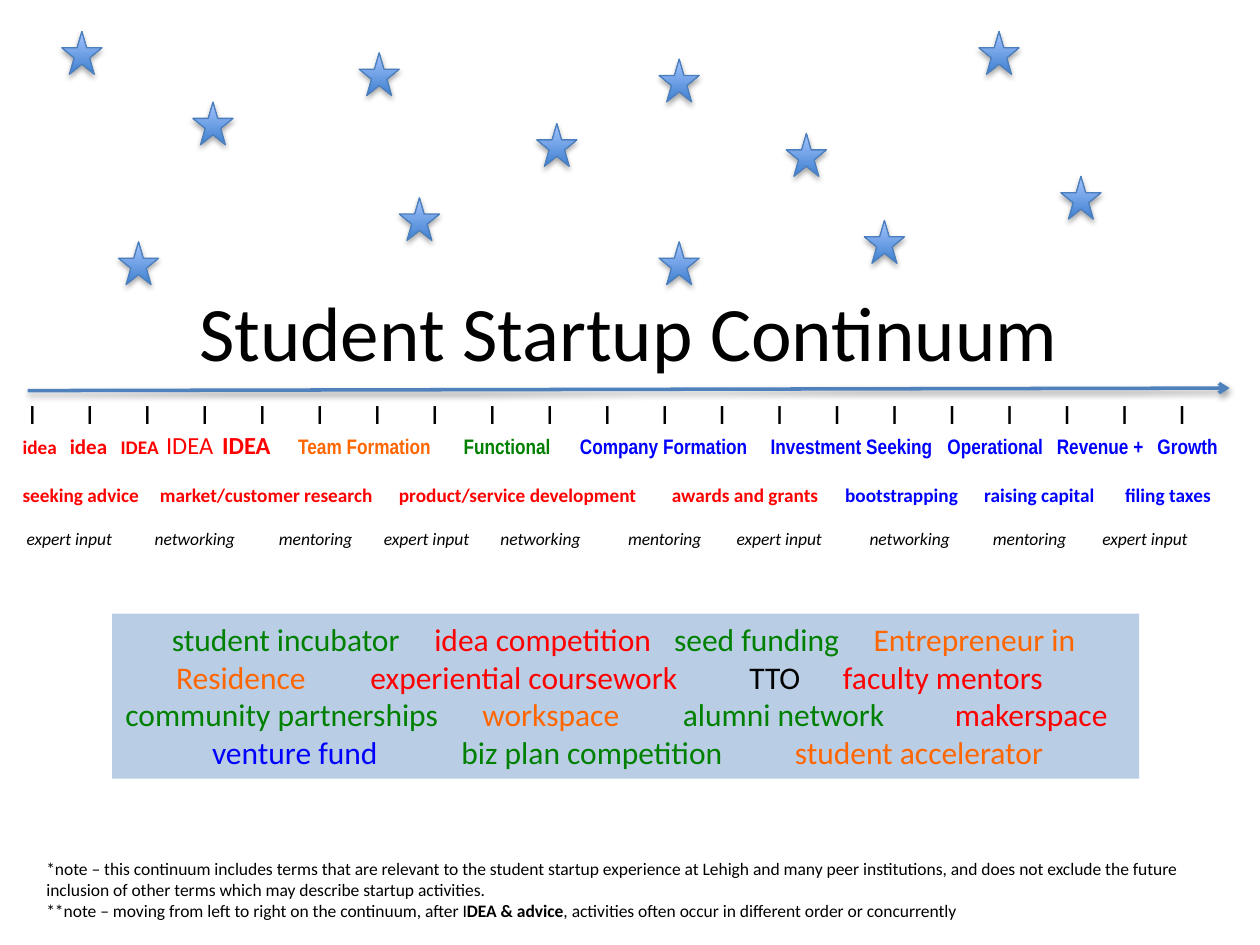
from lxml import etree
from pptx import Presentation
from pptx.dml.color import RGBColor
from pptx.enum.shapes import MSO_CONNECTOR, MSO_SHAPE
from pptx.enum.text import MSO_ANCHOR, PP_ALIGN
from pptx.oxml.ns import qn
from pptx.util import Pt

STAR = MSO_SHAPE.STAR_5_POINT
RECTANGLE = MSO_SHAPE.RECTANGLE
STRAIGHT = MSO_CONNECTOR.STRAIGHT
MIDDLE, TOP = MSO_ANCHOR.MIDDLE, MSO_ANCHOR.TOP
CENTER, LEFT = PP_ALIGN.CENTER, PP_ALIGN.LEFT

COLORS = {
    "black": "000000", "red": "FF0000", "orange": "FF6600",
    "green": "008000", "blue": "0000FF", "panel": "B9CDE5",
    "axis": "4F81BD", "star_edge": "4B7EBC",
    "star_dark": "3F80CE", "star_light": "A4C4FF",
}

STAR_SIZE = (23, 24.5)
STARS = [
    (35.3, 18), (67.7, 138.2), (110.2, 58.3), (205.2, 30.2),
    (228.2, 113), (306.7, 70.6), (376.6, 33.8), (376.6, 138.2),
    (449.3, 76.3), (493.9, 126), (559.4, 18), (606.2, 100.8),
]

TICK_COUNT, TICK_START, TICK_PITCH = 21, 3.6, 32.85

# Each row item is (tab stop, text, format).
TICKS = [(TICK_START + index * TICK_PITCH, "I", {"size": 16})
         for index in range(TICK_COUNT)]


def bold(color, size=11, name="Calibri"):
    return {"color": color, "size": size, "name": name, "bold": True}


def stage(color):
    return bold(color, 12, "Arial Narrow")


STAGES = [
    (0, "idea", bold("red")),
    (27, "idea", bold("red", 12)),
    (56, "IDEA", bold("red")),
    (82, "IDEA", {"color": "red", "size": 14}),
    (114, "IDEA", bold("red", 14)),
    (157.5, "Team Formation", stage("orange")),
    (252, "Functional", stage("green")),
    (318.5, "Company Formation", stage("blue")),
    (427.5, "Investment Seeking", stage("blue")),
    (528.5, "Operational", stage("blue")),
    (591, "Revenue +", stage("blue")),
    (648.5, "Growth", stage("blue")),
]

ACTIVITIES = [
    (0, "seeking advice", bold("red")),
    (78.5, "market/customer research", bold("red")),
    (215, "product/service development", bold("red")),
    (371, "awards and grants", bold("red")),
    (470, "bootstrapping", bold("blue")),
    (549.5, "raising capital", bold("blue")),
    (630, "filing taxes", bold("blue")),
]

SUPPORT_NAMES = ("expert input", "networking", "mentoring")
SUPPORT_STOPS = [2.3, 75.5, 146.5, 206.5, 273, 346, 408, 484, 554.5, 617]
SUPPORT = [(stop, SUPPORT_NAMES[index % 3], {"size": 10, "italic": True})
           for index, stop in enumerate(SUPPORT_STOPS)]


def resource(stop, text, color):
    return stop, text, {"size": 18, "color": color}


RESOURCES = [
    [resource(27, "student incubator", "green"),
     resource(177, "idea competition", "red"),
     resource(314, "seed funding", "green"),
     resource(428, "Entrepreneur in", "orange")],
    [resource(29.5, "Residence", "orange"),
     resource(140.5, "experiential coursework", "red"),
     resource(357, "TTO", "black"),
     resource(410.5, "faculty mentors", "red")],
    [resource(0.5, "community partnerships", "green"),
     resource(204.5, "workspace", "orange"),
     resource(319, "alumni network", "green"),
     resource(474.5, "makerspace", "red")],
    [resource(50, "venture fund", "blue"),
     resource(192.5, "biz plan competition", "green"),
     resource(383, "student accelerator", "orange")],
]

NOTES = [
    [("*note – this continuum includes terms that are relevant to the student "
      "startup experience at Lehigh and many peer institutions, and does not "
      "exclude the future inclusion of other terms which may describe startup "
      "activities.", {"size": 10})],
    [("**note – moving from left to right on the continuum, after I", {"size": 10}),
     ("DEA & advice", {"size": 10, "bold": True}),
     (", activities often occur in different order or concurrently", {"size": 10})],
]


class SlideBuilder:
    BASE = {"name": "Calibri", "size": 18, "color": "black",
            "bold": False, "italic": False}

    def __init__(self, slide):
        self.slide = slide

    def color(self, name):
        return RGBColor.from_string(COLORS[name])

    def add_shadow(self, shape, alpha, blur, distance):
        effects = etree.SubElement(shape._element.spPr, qn("a:effectLst"))
        shadow = etree.SubElement(
            effects, qn("a:outerShdw"), blurRad=str(Pt(blur)),
            dist=str(Pt(distance)), dir="5400000", rotWithShape="0")
        black = etree.SubElement(shadow, qn("a:srgbClr"), val=COLORS["black"])
        etree.SubElement(black, qn("a:alpha"), val=str(alpha * 1000))

    def add_run(self, paragraph, text, style):
        run = paragraph.add_run()
        run.text = text
        values = {**self.BASE, **style}
        run.font.color.rgb = self.color(values.pop("color"))
        values["size"] = Pt(values["size"])
        for attribute, value in values.items():
            setattr(run.font, attribute, value)

    def add_row(self, paragraph, items):
        """Place each item of a row at its own tab stop."""
        tabs = etree.SubElement(paragraph._p.get_or_add_pPr(), qn("a:tabLst"))
        for stop, text, style in items:
            if stop:
                etree.SubElement(tabs, qn("a:tab"), pos=str(Pt(stop)), algn="l")
                text = "\t" + text
            self.add_run(paragraph, text, style)

    def fill_rows(self, frame, rows, gaps):
        for index, (items, gap) in enumerate(zip(rows, gaps)):
            paragraph = frame.add_paragraph() if index else frame.paragraphs[0]
            paragraph.alignment = LEFT
            self.add_row(paragraph, items)
            if gap:
                paragraph.space_before = Pt(gap)

    def text_box(self, box, paragraphs=(), **frame_format):
        frame = self.slide.shapes.add_textbox(*map(Pt, box)).text_frame
        alignment = frame_format.pop("alignment", LEFT)
        for attribute, value in {"word_wrap": True, **frame_format}.items():
            setattr(frame, attribute, value)
        for index, runs in enumerate(paragraphs):
            paragraph = frame.add_paragraph() if index else frame.paragraphs[0]
            paragraph.alignment = alignment
            for text, style in runs:
                self.add_run(paragraph, text, style)
        return frame

    def arrow(self, start, end):
        line = self.slide.shapes.add_connector(STRAIGHT, *map(Pt, start + end))
        line.line.color.rgb = self.color("axis")
        line.line.width = Pt(2)
        etree.SubElement(line.line._get_or_add_ln(), qn("a:tailEnd"), type="arrow")
        self.add_shadow(line, 38, 3.1, 1.6)

    def star(self, left, top):
        star = self.slide.shapes.add_shape(STAR, *map(Pt, (left, top) + STAR_SIZE))
        star.fill.gradient()
        star.fill.gradient_angle = 90
        stops = zip(star.fill.gradient_stops, (0, 1), ("star_dark", "star_light"))
        for stop, position, name in stops:
            stop.position = position
            stop.color.rgb = self.color(name)
        star.line.color.rgb = self.color("star_edge")
        star.line.width = Pt(0.75)
        self.add_shadow(star, 35, 3.1, 1.8)

    def panel(self, box, rows):
        panel = self.slide.shapes.add_shape(RECTANGLE, *map(Pt, box))
        panel.shadow.inherit = False
        panel.fill.solid()
        panel.fill.fore_color.rgb = self.color("panel")
        panel.line.fill.background()
        panel.text_frame.vertical_anchor = TOP
        self.fill_rows(panel.text_frame, rows, [0] * len(rows))


def main():
    presentation = Presentation()
    presentation.slide_width, presentation.slide_height = Pt(720), Pt(540)
    builder = SlideBuilder(presentation.slides.add_slide(presentation.slide_layouts[6]))
    builder.text_box((35.3, 144, 648, 90), [[("Student Startup Continuum", {"size": 44})]],
                     alignment=CENTER, vertical_anchor=MIDDLE)
    continuum = builder.text_box((5.8, 157.7, 714.2, 161.3), margin_top=Pt(69))
    builder.fill_rows(continuum, [TICKS, STAGES, ACTIVITIES, SUPPORT], [0, 0, 13.7, 12])
    builder.arrow((15.8, 223.2), (702.7, 221.8))
    builder.text_box((19.4, 486.7, 687.6, 43.9), NOTES)
    for left, top in STARS:
        builder.star(left, top)
    builder.panel((64.1, 350.6, 586.8, 94.3), RESOURCES)
    presentation.save("out.pptx")


if __name__ == "__main__":
    main()
